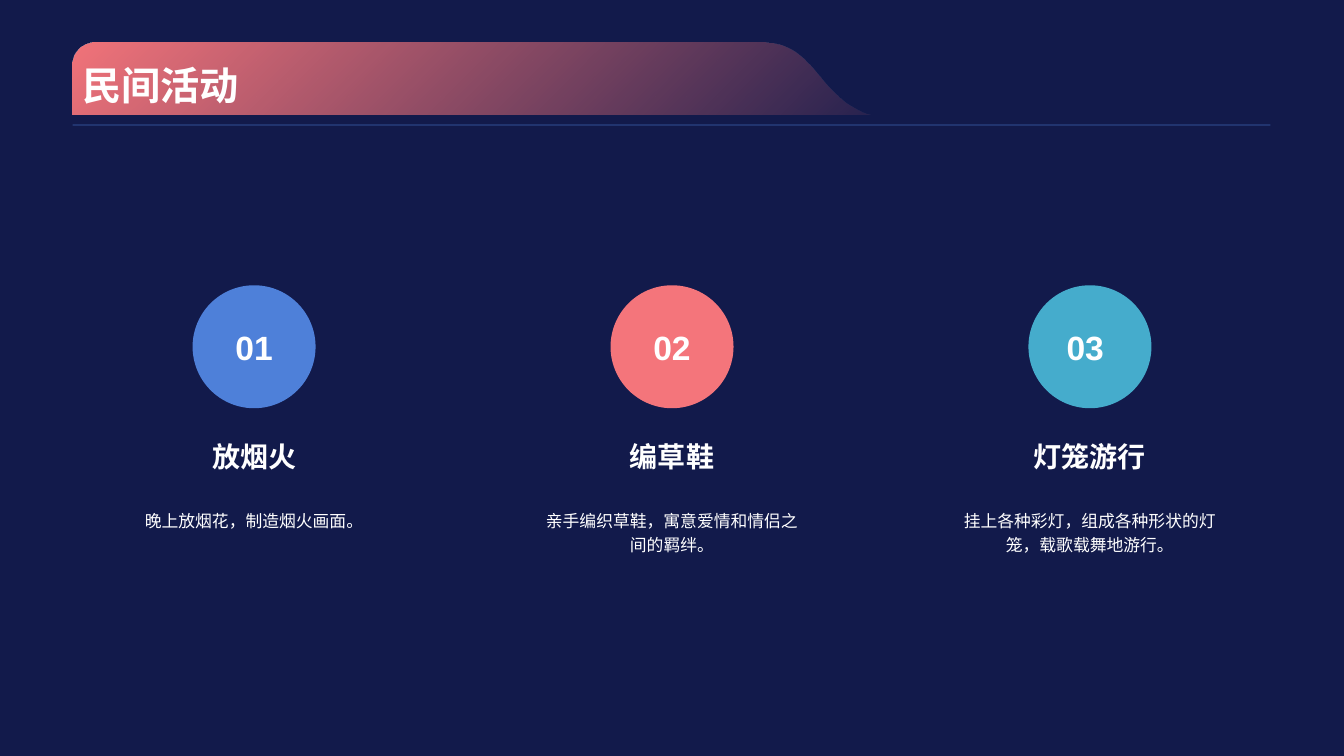
from lxml.etree import SubElement
from pptx import Presentation
from pptx.dml.color import RGBColor
from pptx.enum.dml import MSO_FILL
from pptx.enum.lang import MSO_LANGUAGE_ID as Language
from pptx.enum.shapes import MSO_CONNECTOR as Connector, MSO_SHAPE as Shape
from pptx.enum.text import MSO_ANCHOR as Anchor, MSO_AUTO_SIZE as AutoSize, PP_ALIGN as Align
from pptx.oxml.ns import qn
from pptx.util import Inches, Pt

WIDTH, HEIGHT = 13.33, 7.5
MARGIN = 0.72
CENTER, PITCH = WIDTH / 2, 4.145
NAVY, WHITE, BLUE, CORAL, TEAL = "121A4B", "FFFFFF", "4E80D9", "F4757B", "45ACCC"
ACTIVITIES = [
    ("01", "放烟火", "晚上放烟花，制造烟火画面。", BLUE),
    ("02", "编草鞋", "亲手编织草鞋，寓意爱情和情侣之间的羁绊。", CORAL),
    ("03 ", "灯笼游行", "挂上各种彩灯，组成各种形状的灯笼，载歌载舞地游行。", TEAL),
]


def paint(color_format, color):
    """Apply a hex colour to a colour format."""
    color_format.rgb = RGBColor.from_string(color)


def fill_solid(fill, color):
    """Make a fill solid in a hex colour."""
    if fill.type != MSO_FILL.SOLID:
        fill.solid()
    paint(fill.fore_color, color)


def add_alpha(color_element, percent):
    """Give a colour element an opacity in percent."""
    SubElement(color_element, qn("a:alpha")).set("val", str(percent * 1000))


def write(shape, text, size, bold=True, align=Align.CENTER, anchor=Anchor.MIDDLE, spacing=None):
    """Write one formatted paragraph into a shape."""
    frame = shape.text_frame
    frame.word_wrap = True
    frame.vertical_anchor = anchor
    frame.text = text
    paragraph = frame.paragraphs[0]
    paragraph.alignment = align
    paragraph.line_spacing = spacing
    font = paragraph.runs[0].font
    font.name, font.size, font.bold = "Arial", Pt(size), bold
    font.language_id = Language.SIMPLIFIED_CHINESE
    paint(font.color, WHITE)


def add_text(slide, left, top, width, height, text, size, **style):
    """Add a text box."""
    box = slide.shapes.add_textbox(Inches(left), Inches(top), Inches(width), Inches(height))
    write(box, text, size, **style)
    return box


def curve(start, first, second, end, steps=16):
    """Return points along a cubic curve, without its start."""
    points = []
    for step in range(1, steps + 1):
        t = step / steps
        weights = ((1 - t) ** 3, 3 * t * (1 - t) ** 2, 3 * t * t * (1 - t), t ** 3)
        points.append(tuple(
            sum(weight * value for weight, value in zip(weights, values))
            for values in zip(start, first, second, end)
        ))
    return points


def add_banner(slide):
    """Add the fading banner behind the title."""
    tip, bend, crest = (8.63, 1.14), (8.05, 0.67), (7.56, 0.42)
    shoulder, side = (0.94, 0.42), (MARGIN, 0.65)
    outline = [
        *curve(tip, (8.38, 1.07), (8.23, 0.89), bend),
        *curve(bend, (7.86, 0.46), (7.71, 0.42), crest),
        shoulder,
        *curve(shoulder, (0.82, 0.42), (MARGIN, 0.52), side),
        (MARGIN, 1.14),
    ]
    builder = slide.shapes.build_freeform(Inches(tip[0]), Inches(tip[1]))
    builder.add_line_segments([(Inches(x), Inches(y)) for x, y in outline])
    banner = builder.convert_to_shape()
    banner.shadow.inherit = False
    banner.line.fill.background()
    banner.fill.gradient()
    banner.fill.gradient_angle = 315
    for stop, position in zip(banner.fill.gradient_stops, (0, 1)):
        paint(stop.color, CORAL)
        stop.position = position
    colors = list(banner.element.spPr.iter(qn("a:srgbClr")))
    add_alpha(colors[-1], 10)


def add_rule(slide):
    """Add the thin line below the banner."""
    top = Inches(1.24)
    rule = slide.shapes.add_connector(Connector.STRAIGHT, Inches(MARGIN), top, Inches(12.6), top)
    rule.line.width = Pt(1)
    fill_solid(rule.line.fill, BLUE)
    properties = rule.element.spPr
    add_alpha(next(properties.iter(qn("a:srgbClr"))), 40)
    SubElement(properties, qn("a:effectLst"))


def add_activity(slide, center, number, name, description, color):
    """Add one column: numbered circle, name and description."""
    size = 1.22
    circle = slide.shapes.add_shape(
        Shape.OVAL, Inches(center - size / 2), Inches(2.83), Inches(size), Inches(size))
    circle.shadow.inherit = False
    fill_solid(circle.fill, color)
    circle.line.fill.background()
    write(circle, number, 24)
    add_text(slide, center - 2.19 / 2, 4.34, 2.19, 0.4, name, 20, anchor=Anchor.BOTTOM)
    box = add_text(slide, center - 1.4, 4.98, 2.8, 0.56, description, 12,
                   bold=False, anchor=Anchor.TOP, spacing=1.2)
    box.text_frame.auto_size = AutoSize.SHAPE_TO_FIT_TEXT


def main():
    """Build and save the slide."""
    presentation = Presentation()
    presentation.slide_width, presentation.slide_height = Inches(WIDTH), Inches(HEIGHT)
    slide = presentation.slides.add_slide(presentation.slide_layouts[6])
    fill_solid(slide.background.fill, NAVY)
    add_banner(slide)
    add_rule(slide)
    for column, activity in enumerate(ACTIVITIES):
        add_activity(slide, CENTER + (column - 1) * PITCH, *activity)
    add_text(slide, MARGIN, 0, WIDTH - 2 * MARGIN, 1.12, "民间活动", 28,
             align=Align.LEFT, anchor=Anchor.BOTTOM)
    presentation.save("out.pptx")


if __name__ == "__main__":
    main()
